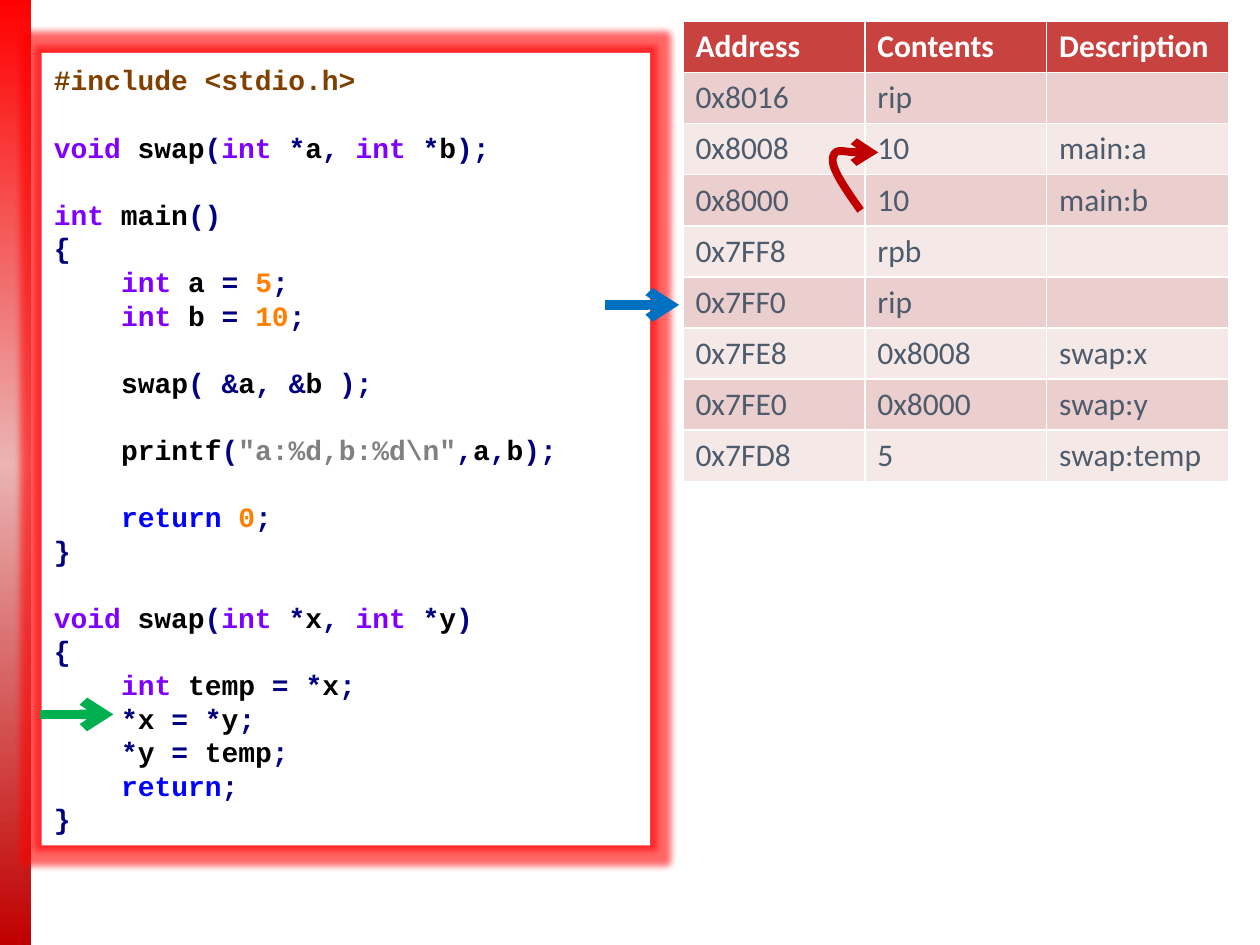
from itertools import groupby

from lxml import etree
from pptx import Presentation
from pptx.dml.color import RGBColor
from pptx.enum.shapes import MSO_CONNECTOR, MSO_SHAPE
from pptx.enum.text import MSO_ANCHOR, PP_ALIGN
from pptx.oxml.ns import qn
from pptx.util import Inches, Pt

RECTANGLE = MSO_SHAPE.RECTANGLE
STRAIGHT = MSO_CONNECTOR.STRAIGHT
LEFT, MIDDLE = PP_ALIGN.LEFT, MSO_ANCHOR.MIDDLE

WHITE = RGBColor(0xFF, 0xFF, 0xFF)
BLACK = RGBColor(0x00, 0x00, 0x00)
BROWN = RGBColor(0x80, 0x40, 0x00)
PURPLE = RGBColor(0x80, 0x00, 0xFF)
NAVY = RGBColor(0x00, 0x00, 0x80)
PURE_BLUE = RGBColor(0x00, 0x00, 0xFF)
ORANGE = RGBColor(0xFF, 0x80, 0x00)
GRAY = RGBColor(0x80, 0x80, 0x80)
GREEN = RGBColor(0x00, 0xB0, 0x50)
BLUE = RGBColor(0x00, 0x70, 0xC0)
DARK_RED = RGBColor(0xC0, 0x00, 0x00)
RED = RGBColor(0xFF, 0x00, 0x00)
PINK = RGBColor(0xE9, 0xB4, 0xB3)
HEADER_RED = RGBColor(0xC8, 0x43, 0x40)
ROW_FILLS = [RGBColor(0xEB, 0xCF, 0xCF), RGBColor(0xF5, 0xE9, 0xE8)]
SLATE = RGBColor(0x4D, 0x5B, 0x6B)

WORD_COLORS = {"int": PURPLE, "void": PURPLE, "return": PURE_BLUE}
CODE_SIZE, CODE_LINE = 16, 19.2
CODE_INDENT = Pt(4 * 0.6 * CODE_SIZE)  # four monospaced characters

CODE = r'''#include <stdio.h>

void swap(int *a, int *b);

int main()
{
    int a = 5;
    int b = 10;

    swap( &a, &b );

    printf("a:%d,b:%d\n",a,b);

    return 0;
}

void swap(int *x, int *y)
{
    int temp = *x;
    *x = *y;
    *y = temp;
    return;
}'''

STACK = [
    ("Address", "Contents", "Description"),
    ("0x8016", "rip", ""),
    ("0x8008", "10", "main:a"),
    ("0x8000", "10", "main:b"),
    ("0x7FF8", "rpb", ""),
    ("0x7FF0", "rip", ""),
    ("0x7FE8", "0x8008", "swap:x"),
    ("0x7FE0", "0x8000", "swap:y"),
    ("0x7FD8", "5", "swap:temp"),
]


def color_tokens(line):
    """Split a line of C into (text, color) pairs."""
    if line.startswith("#"):
        return [(line, BROWN)]
    tokens = []
    for index, part in enumerate(line.split('"')):
        if index % 2:
            tokens.append((f'"{part}"', GRAY))
            continue
        for is_symbol, chars in groupby(part, lambda c: not (c.isalnum() or c.isspace())):
            text = "".join(chars)
            if is_symbol:
                tokens.append((text, NAVY))
                continue
            for _, letters in groupby(text, str.isspace):
                word = "".join(letters)
                plain = ORANGE if word.isdigit() else BLACK
                tokens.append((word, WORD_COLORS.get(word, plain)))
    return tokens


def style_arrow(arrow, color, width):
    """Give a line its color, width, open arrowhead and no shadow."""
    arrow.line.color.rgb = color
    arrow.line.width = Pt(width)
    etree.SubElement(arrow.line._get_or_add_ln(), qn("a:tailEnd"), type="arrow")
    properties = arrow._element.spPr
    if properties.find(qn("a:effectLst")) is None:
        etree.SubElement(properties, qn("a:effectLst"))


deck = Presentation()
deck.slide_width, deck.slide_height = Inches(10), Inches(7.5)
page = deck.slides.add_slide(deck.slide_layouts[6])

# Gradient bar along the left edge
bar = page.shapes.add_shape(RECTANGLE, 0, 0, Inches(0.25), deck.slide_height)
bar.shadow.inherit = False
bar.line.fill.background()
bar.fill.gradient()
bar.fill.gradient_angle = 270
stops = bar._element.spPr.find(qn("a:gradFill")).find(qn("a:gsLst"))
for stop in list(stops):
    stops.remove(stop)
for position, color in [(0, RED), (49, PINK), (100, DARK_RED)]:
    stop = etree.SubElement(stops, qn("a:gs"), pos=str(position * 1000))
    etree.SubElement(stop, qn("a:srgbClr"), val=str(color))

# Code panel with a red glow
panel = page.shapes.add_shape(RECTANGLE, Inches(0.33), Inches(0.42), Inches(4.83), Inches(6.29))
panel.shadow.inherit = False
panel.fill.solid()
panel.fill.fore_color.rgb = WHITE
panel.line.fill.background()
effects = panel._element.spPr.find(qn("a:effectLst"))
glow = etree.SubElement(effects, qn("a:glow"), rad=str(Pt(8)))
glow_color = etree.SubElement(glow, qn("a:srgbClr"), val=str(RED))
etree.SubElement(glow_color, qn("a:alpha"), val="60000")

# Code text: an empty line becomes space before the next paragraph
frame = panel.text_frame
frame.word_wrap = True
frame.vertical_anchor = MIDDLE
para, gap = frame.paragraphs[0], 0
for number, line in enumerate(CODE.splitlines()):
    if not line:
        gap = CODE_LINE
        continue
    if number:
        para = frame.add_paragraph()
    para.alignment = LEFT
    para.line_spacing = Pt(CODE_LINE)
    para.space_before = Pt(gap)
    gap = 0
    if line.startswith(" "):
        para._p.get_or_add_pPr().set("marL", str(CODE_INDENT))
    para.font.name = "Courier New"
    para.font.size = Pt(CODE_SIZE)
    para.font.bold = True
    for text, color in color_tokens(line.strip()):
        span = para.add_run()
        span.text = text
        span.font.color.rgb = color

# Stack table
table = page.shapes.add_table(len(STACK), len(STACK[0]), Inches(5.42), Inches(0.17),
                              Inches(4.33), Inches(3.65)).table
for row, values in enumerate(STACK):
    for column, value in enumerate(values):
        cell = table.cell(row, column)
        cell.fill.solid()
        cell.fill.fore_color.rgb = ROW_FILLS[(row - 1) % 2] if row else HEADER_RED
        cell.text = value
        para = cell.text_frame.paragraphs[0]
        para.font.name = "Calibri"
        para.font.size = Pt(18)
        para.font.bold = row == 0
        para.font.color.rgb = SLATE if row else WHITE

# Arrows to the current code line and the current stack frame
for start, end, height, color in [(0.32, 0.9, 5.67, GREEN), (4.8, 5.39, 2.42, BLUE)]:
    arrow = page.shapes.add_connector(STRAIGHT, Inches(start), Inches(height),
                                      Inches(end), Inches(height))
    style_arrow(arrow, color, 5.5)

# Curved arrow from b to a: two Bezier segments of three points each
builder = page.shapes.build_freeform(Inches(6.83), Inches(1.67))
curve_points = [(6.71, 1.5), (6.59, 1.33), (6.61, 1.25),
                (6.63, 1.17), (6.97, 1.23), (6.97, 1.21)]
builder.add_line_segments([(Inches(x), Inches(y)) for x, y in curve_points], close=False)
copy_arrow = builder.convert_to_shape()
copy_arrow.shadow.inherit = False
copy_arrow.fill.background()
style_arrow(copy_arrow, DARK_RED, 4.5)
outline = next(copy_arrow._element.iter(qn("a:path")))
segments = outline.findall(qn("a:lnTo"))
for first in (0, 3):
    curve = etree.SubElement(outline, qn("a:cubicBezTo"))
    for segment in segments[first:first + 3]:
        curve.append(segment[0])
        outline.remove(segment)

deck.save("out.pptx")
